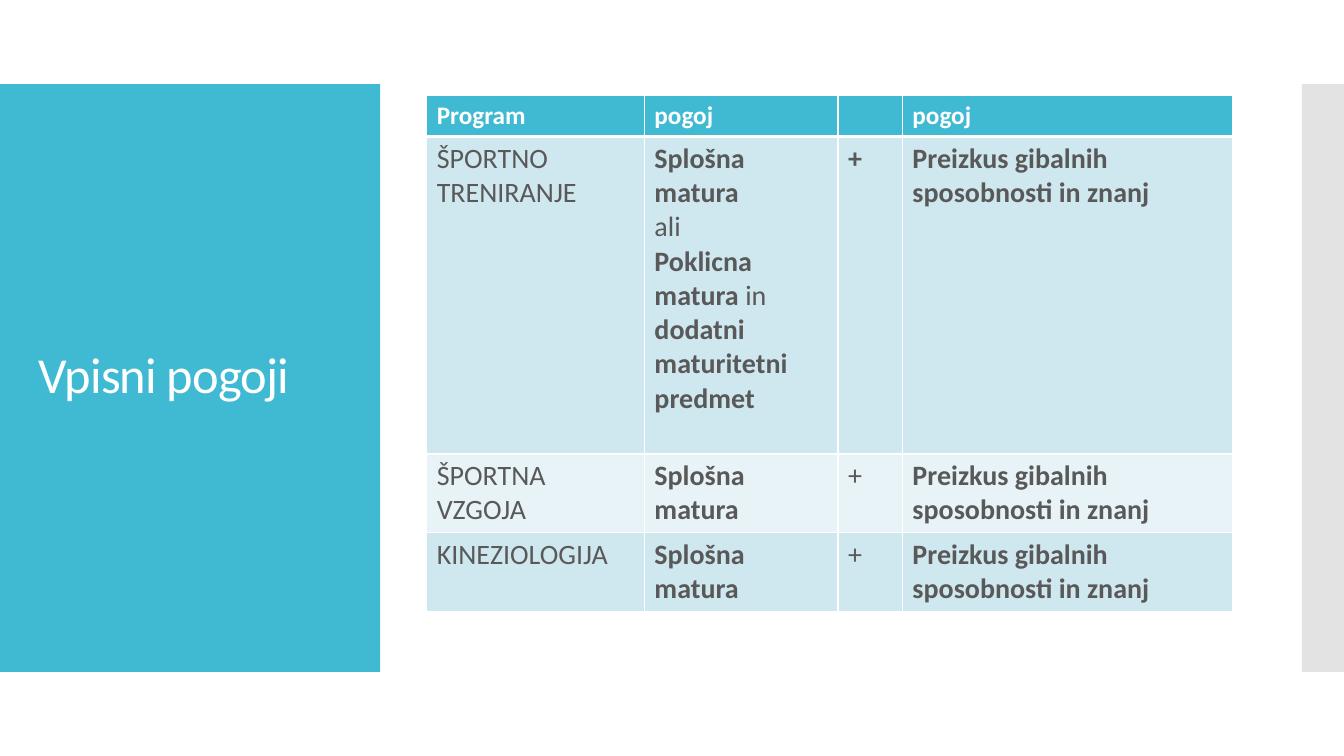
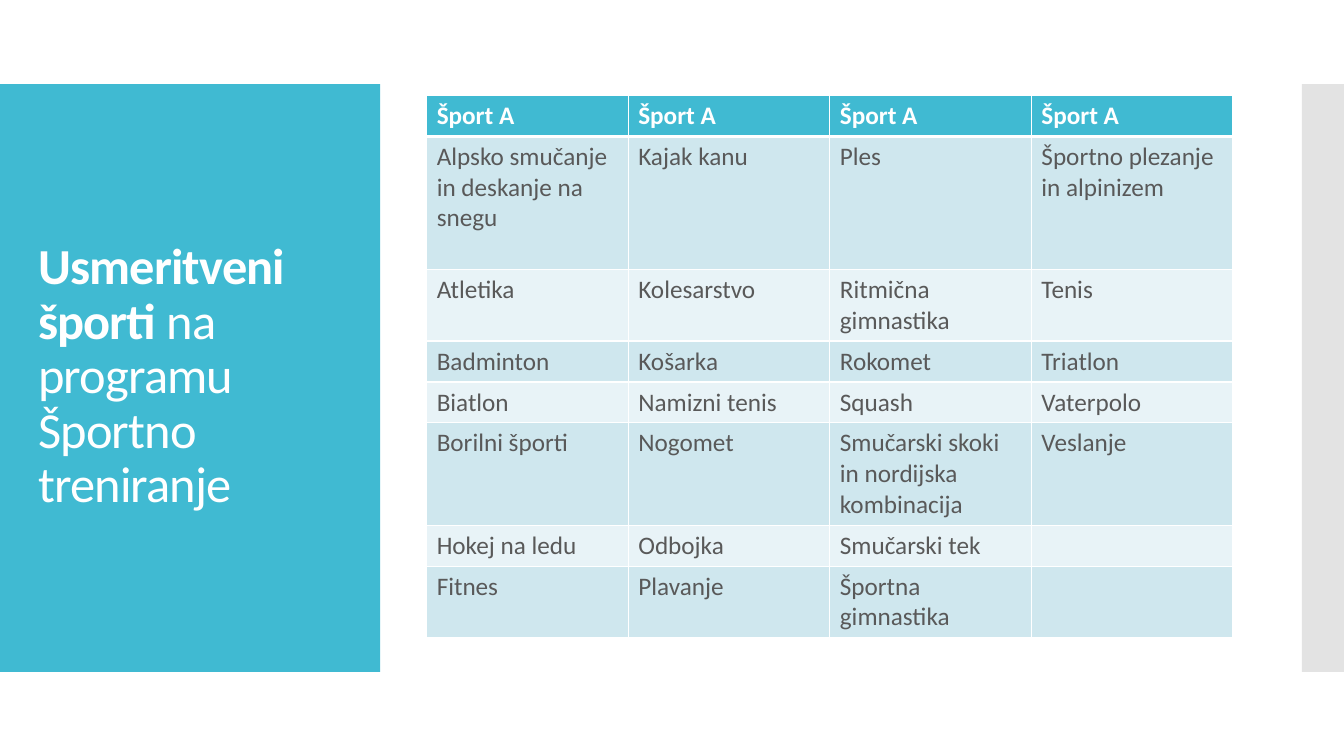
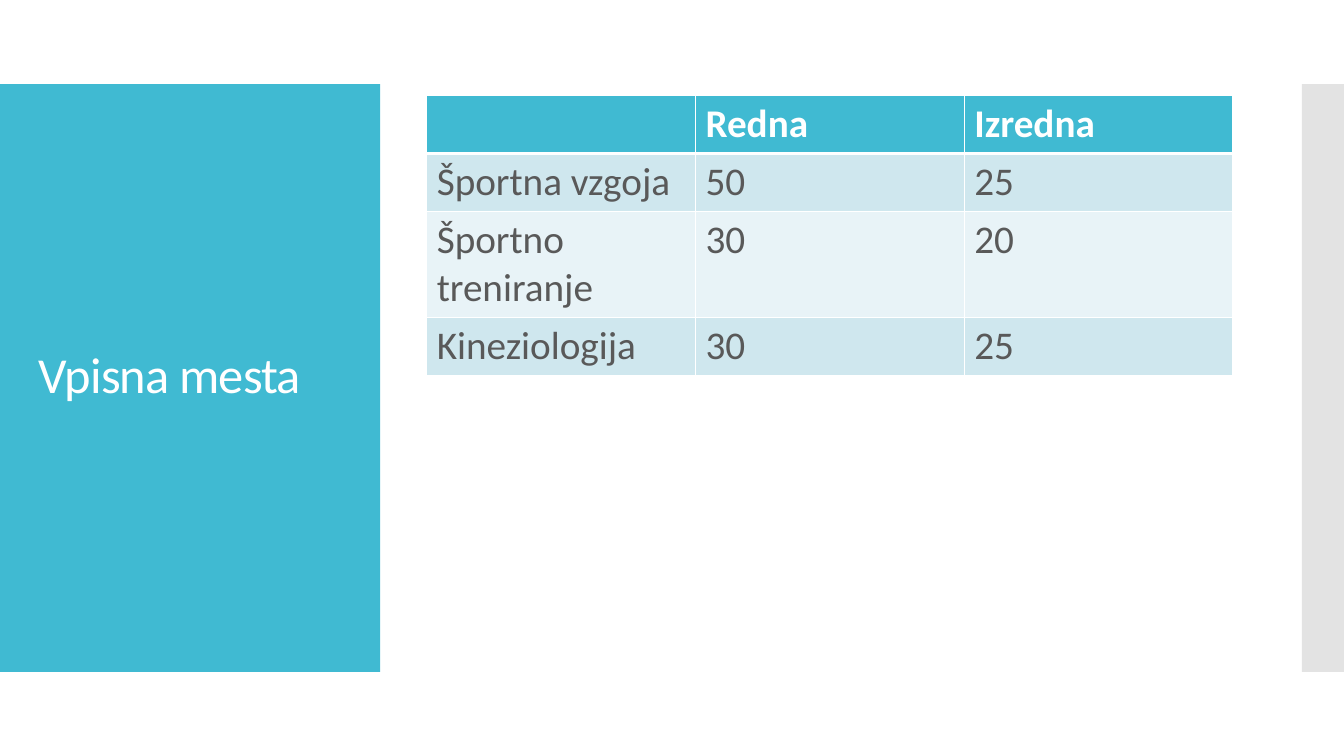
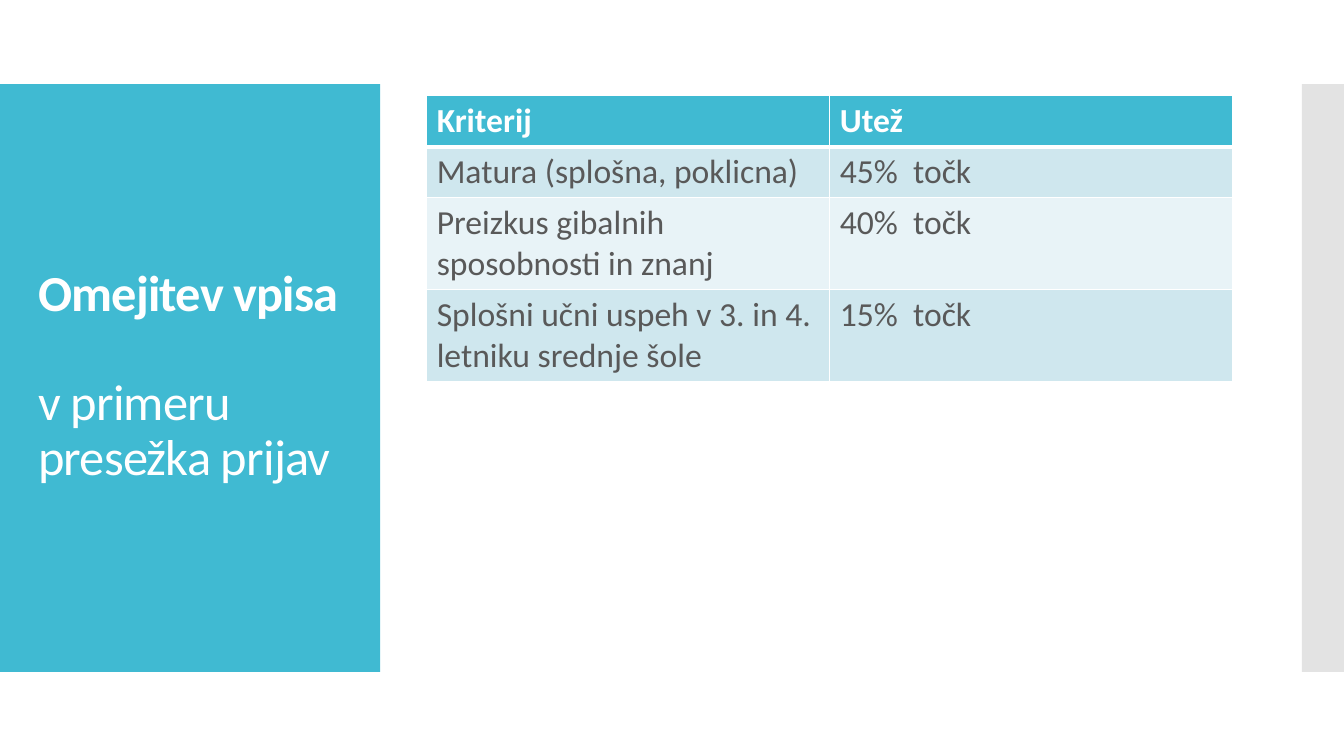
"""Build four slides on sports study admission, each with a title panel and a table."""
import lxml.etree
import pptx
import pptx.dml.color
import pptx.enum.shapes
import pptx.enum.text
import pptx.oxml.ns
import pptx.util

COLORS = {
    "panel": "40BAD2",
    "edge": "C8C8C8",
    "white": "FFFFFF",
    "text": "595959",
    "band_dark": "CFE7EE",
    "band_light": "E8F3F7",
}
FONT = "Calibri"
TITLE_SIZE = 36
HEADER_SIZE = 18
CELL_MARGIN = pptx.util.Inches(0.1)
LINE_RATIO = 1.22

presentation = pptx.Presentation()
presentation.slide_width = pptx.util.Inches(13.333)
presentation.slide_height = pptx.util.Inches(7.5)
COLUMN = presentation.slide_width / 32
ROW = presentation.slide_height / 36
TABLE_WIDTH = presentation.slide_width * 0.6

EXAM = "*Preizkus gibalnih sposobnosti in znanj*"
SLIDES = [
    {
        "title": ["Vpisni pogoji"],
        "sizes": (HEADER_SIZE, 20),
        "shares": [0.27, 0.24, 0.08, 0.41],
        "lines": [1, 9, 2, 2],
        "rows": [
            ["*Program*", "*pogoj*", "", "*pogoj*"],
            ["ŠPORTNO TRENIRANJE",
             ["*Splošna matura*", "ali", "*Poklicna matura *in *dodatni maturitetni predmet*"],
             "*+*", EXAM],
            ["ŠPORTNA VZGOJA", "*Splošna matura*", "+", EXAM],
            ["KINEZIOLOGIJA", "*Splošna matura*", "+", EXAM],
        ],
    },
    {
        "title": ["*Usmeritveni športi *na programu\nŠportno treniranje"],
        "sizes": (HEADER_SIZE, 18),
        "shares": [1 / 4] * 4,
        "lines": [1, 4, 2, 1, 1, 3, 1, 2],
        "rows": [
            ["*Šport A*"] * 4,
            ["Alpsko smučanje in deskanje na snegu", "Kajak kanu", "Ples",
             "Športno plezanje in alpinizem"],
            ["Atletika", "Kolesarstvo", "Ritmična gimnastika", "Tenis"],
            ["Badminton", "Košarka", "Rokomet", "Triatlon"],
            ["Biatlon", "Namizni tenis", "Squash", "Vaterpolo"],
            ["Borilni športi", "Nogomet", "Smučarski skoki in nordijska kombinacija", "Veslanje"],
            ["Hokej na ledu", "Odbojka", "Smučarski tek", ""],
            ["Fitnes", "Plavanje", "Športna gimnastika", ""],
        ],
    },
    {
        "title": ["Vpisna mesta"],
        "sizes": (28, 28),
        "shares": [1 / 3] * 3,
        "lines": [1, 1, 2, 1],
        "rows": [
            ["", "*Redna*", "*Izredna*"],
            ["Športna vzgoja", "50", "25"],
            ["Športno treniranje", "30", "20"],
            ["Kineziologija", "30", "25"],
        ],
    },
    {
        "title": ["*Omejitev vpisa*", "v primeru presežka prijav"],
        "sizes": (24, 24),
        "shares": [1 / 2] * 2,
        "lines": [1, 1, 2, 2],
        "rows": [
            ["*Kriterij*", "*Utež*"],
            ["Matura (splošna, poklicna)", "45%  točk"],
            ["Preizkus gibalnih sposobnosti in znanj", "40%  točk"],
            ["Splošni učni uspeh v 3. in 4. letniku srednje šole", "15%  točk"],
        ],
    },
]


def write_text(text_frame, paragraphs, size, color):
    """Write paragraphs whose asterisks switch bold on and off."""
    for number, marked in enumerate(paragraphs):
        paragraph = text_frame.add_paragraph() if number else text_frame.paragraphs[0]
        for part_number, part in enumerate(marked.split("*")):
            for line_number, line in enumerate(part.split("\n")):
                if line_number:
                    paragraph.add_line_break()
                if line:
                    run = paragraph.add_run()
                    run.text = line
                    run.font.name = FONT
                    run.font.size = pptx.util.Pt(size)
                    run.font.bold = part_number % 2 == 1
                    run.font.color.rgb = pptx.dml.color.RGBColor.from_string(COLORS[color])


def add_borders(cell, widths):
    """Draw white borders: left, right, top and bottom, in points."""
    properties = cell._tc.get_or_add_tcPr()
    for position, (side, width) in enumerate(zip("LRTB", widths)):
        line = lxml.etree.Element(pptx.oxml.ns.qn(f"a:ln{side}"), w=str(pptx.util.Pt(width)))
        fill = lxml.etree.SubElement(line, pptx.oxml.ns.qn("a:solidFill"))
        lxml.etree.SubElement(fill, pptx.oxml.ns.qn("a:srgbClr"), val=COLORS["white"])
        properties.insert(position, line)


layout = presentation.slide_layouts.get_by_name("Title Only")
title_style = presentation.slide_master.element.find(".//" + pptx.oxml.ns.qn("p:titleStyle"))
title_defaults = title_style.find(".//" + pptx.oxml.ns.qn("a:defRPr"))
title_defaults.set("sz", str(TITLE_SIZE * 100))
title_defaults.set("spc", "-60")

slides = [presentation.slides.add_slide(layout) for content in SLIDES]

for position, (left, width, color) in enumerate([(0, 9.05, "panel"), (31, 1, "edge")]):
    band = slides[0].shapes.add_shape(
        pptx.enum.shapes.MSO_SHAPE.RECTANGLE,
        int(left * COLUMN), int(4 * ROW), int(width * COLUMN), int(28 * ROW))
    band.shadow.inherit = False
    band.line.fill.background()
    band.fill.solid()
    band.fill.fore_color.rgb = pptx.dml.color.RGBColor.from_string(COLORS[color])
    if color == "edge":
        shade = band.element.find(".//" + pptx.oxml.ns.qn("a:srgbClr"))
        lxml.etree.SubElement(shade, pptx.oxml.ns.qn("a:alpha"), val="50000")
    layout.shapes.element.insert(2 + position, band.element)

for slide, content in zip(slides, SLIDES):
    title = slide.shapes.title
    title.left, title.top = int(0.67 * COLUMN), int(5.9 * ROW)
    title.width, title.height = int(7.73 * COLUMN), int(24.14 * ROW)
    title_frame = title.text_frame
    title_frame.word_wrap = True
    title_frame.auto_size = pptx.enum.text.MSO_AUTO_SIZE.NONE
    title_frame.vertical_anchor = pptx.enum.text.MSO_ANCHOR.MIDDLE
    write_text(title_frame, content["title"], TITLE_SIZE, "white")
    for number, paragraph in enumerate(title_frame.paragraphs):
        paragraph.alignment = pptx.enum.text.PP_ALIGN.LEFT
        paragraph.line_spacing = 0.9
        paragraph.space_before = pptx.util.Pt(39 if number else 0)

    header_size, body_size = content["sizes"]
    sizes = [header_size] + [body_size] * (len(content["rows"]) - 1)
    heights = [int(pptx.util.Pt(lines * size * LINE_RATIO) + CELL_MARGIN)
               for lines, size in zip(content["lines"], sizes)]
    table = slide.shapes.add_table(
        len(heights), len(content["shares"]), int(10.16 * COLUMN), int(4.55 * ROW),
        int(TABLE_WIDTH), sum(heights)).table
    for column, share in zip(table.columns, content["shares"]):
        column.width = int(TABLE_WIDTH * share)
    for row_number, texts in enumerate(content["rows"]):
        table.rows[row_number].height = heights[row_number]
        fill_color = "band_dark" if row_number % 2 else "band_light"
        if row_number == 0:
            fill_color = "panel"
        for column_number, text in enumerate(texts):
            cell = table.cell(row_number, column_number)
            cell.fill.solid()
            cell.fill.fore_color.rgb = pptx.dml.color.RGBColor.from_string(COLORS[fill_color])
            add_borders(cell, (1, 1, 3 if row_number == 1 else 1, 3 if row_number == 0 else 1))
            write_text(cell.text_frame, text if isinstance(text, list) else [text],
                       sizes[row_number], "text" if row_number else "white")

presentation.save("out.pptx")
